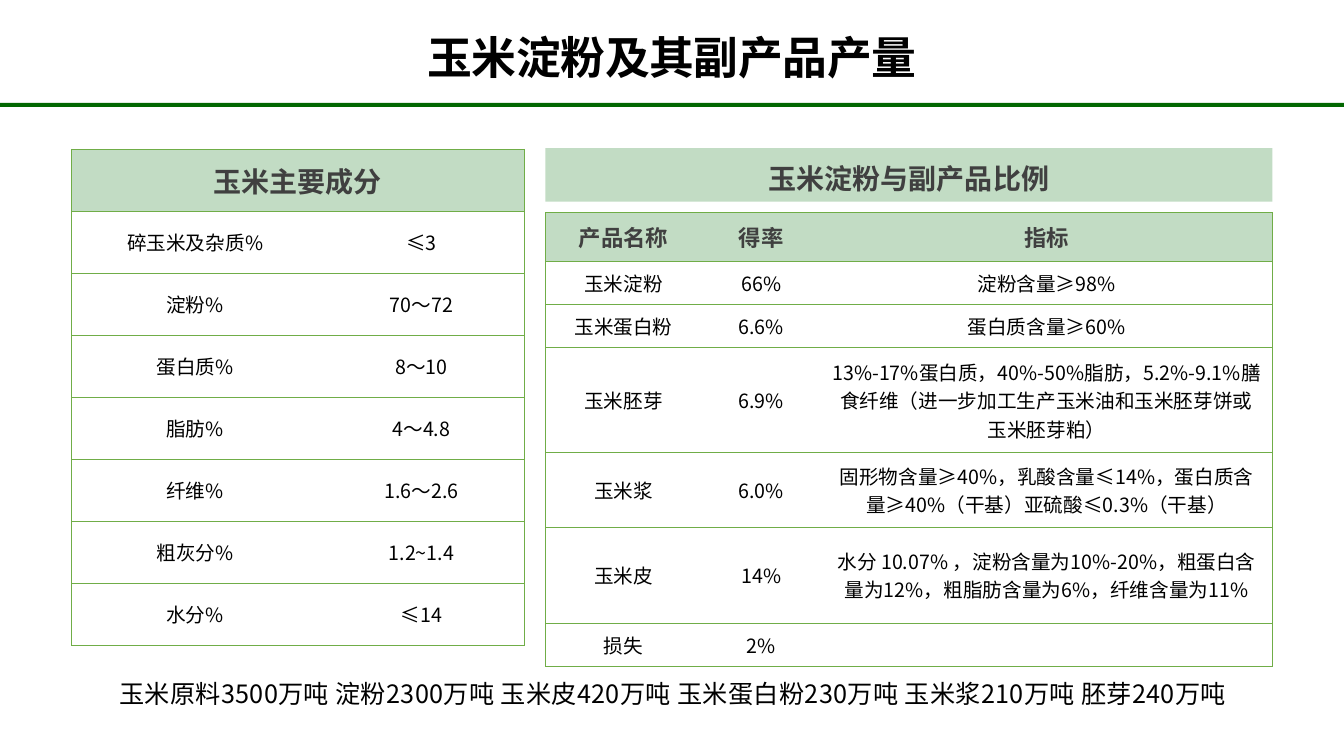
from lxml.etree import SubElement
from pptx import Presentation
from pptx.dml.color import RGBColor
from pptx.enum.shapes import MSO_SHAPE
from pptx.enum.text import MSO_ANCHOR, PP_ALIGN
from pptx.oxml.ns import qn
from pptx.util import Inches, Pt

FONT = "Noto Sans CJK SC"
BLACK, GREY = "000000", "404040"
PALE_GREEN, LINE_GREEN, DARK_GREEN = "C2DCC4", "70AD47", "026701"


def write(frame, text, size, color=BLACK, bold=False, spacing=None, tracking=0):
    """Put one centred paragraph into a text frame; tracking is in points."""
    frame.word_wrap = True
    frame.vertical_anchor = MSO_ANCHOR.MIDDLE
    paragraph = frame.paragraphs[0]
    paragraph.alignment = PP_ALIGN.CENTER
    if spacing:
        paragraph.line_spacing = spacing
    run = paragraph.add_run()
    run.text = text
    run.font.size = Pt(size)
    run.font.bold = bold
    run.font.name = FONT
    run.font.color.rgb = RGBColor.from_string(color)
    SubElement(run.font._element, qn("a:ea"), typeface=FONT)
    if tracking:
        run.font._element.set("spc", str(round(tracking * 100)))


def add_ruled_table(left, top, widths, heights, rows, header_size):
    """Add a table with horizontal rules, an outer frame and a tinted header.

    A header of one text spans all columns.
    """
    frame = slide.shapes.add_table(
        len(heights), len(widths), Inches(left), Inches(top),
        Inches(sum(widths)), Inches(sum(heights)))
    table = frame.table
    table.first_row = table.horz_banding = False
    for column, width in zip(table.columns, widths):
        column.width = Inches(width)
    for row, height in zip(table.rows, heights):
        row.height = Inches(height)
    last = len(widths) - 1
    for row_index, texts in enumerate(rows):
        header = row_index == 0
        spanned = len(texts) == 1
        if spanned:
            table.cell(row_index, 0).merge(table.cell(row_index, last))
        for column_index in range(len(widths)):
            cell = table.cell(row_index, column_index)
            cell.vertical_anchor = MSO_ANCHOR.MIDDLE
            ruled = {"L": column_index == 0,
                     "R": column_index == last or spanned, "T": True, "B": True}
            properties = cell._tc.get_or_add_tcPr()
            for side, visible in ruled.items():
                line = SubElement(properties, qn(f"a:ln{side}"), w=str(Pt(0.5)))
                if visible:
                    fill = SubElement(line, qn("a:solidFill"))
                    SubElement(fill, qn("a:srgbClr"), val=LINE_GREEN)
                else:
                    SubElement(line, qn("a:noFill"))
            if header:
                cell.fill.solid()
                cell.fill.fore_color.rgb = RGBColor.from_string(PALE_GREEN)
            else:
                cell.fill.background()
            if column_index < len(texts) and texts[column_index]:
                write(cell.text_frame, texts[column_index],
                      header_size if header else 14, GREY if header else BLACK, header)


presentation = Presentation()
presentation.slide_width = Inches(13.33)
presentation.slide_height = Inches(7.5)
slide = presentation.slides.add_slide(presentation.slide_layouts[6])

# Title, closing line
output = ["玉米原料3500万吨", "淀粉2300万吨", "玉米皮420万吨",
          "玉米蛋白粉230万吨", "玉米浆210万吨", "胚芽240万吨"]
for box, text, size, bold, spacing, tracking in [
        ((2.85, 0.34, 7.63, 0.51), "玉米淀粉及其副产品产量", 32, True, 0.91, -0.3),
        ((0.51, 6.61, 12.32, 0.44), " ".join(output), 18, False, 1.36, 0.24)]:
    text_frame = slide.shapes.add_textbox(*map(Inches, box)).text_frame
    text_frame.margin_left = text_frame.margin_right = 0
    text_frame.margin_top = text_frame.margin_bottom = 0
    write(text_frame, text, size, bold=bold, spacing=spacing, tracking=tracking)

# Title rule and heading of the right table
for box, color, text in [
        ((0, 1.02, 13.33, 0.04), DARK_GREEN, ""),
        ((5.41, 1.47, 7.21, 0.53), PALE_GREEN, "玉米淀粉与副产品比例")]:
    shape = slide.shapes.add_shape(MSO_SHAPE.RECTANGLE, *map(Inches, box))
    shape.shadow.inherit = False
    shape.fill.solid()
    shape.fill.fore_color.rgb = RGBColor.from_string(color)
    shape.line.fill.background()
    if text:
        write(shape.text_frame, text, 20, GREY, True, 1.2)

# Corn composition
composition = [
    ["玉米主要成分"],
    ["碎玉米及杂质%", "≤3"],
    ["淀粉%", "70～72"],
    ["蛋白质%", "8～10"],
    ["脂肪%", "4～4.8"],
    ["纤维%", "1.6～2.6"],
    ["粗灰分%", "1.2~1.4"],
    ["水分%", "≤14"],
]
add_ruled_table(0.71, 1.48, [2.45, 2.04],
                [4.92 / len(composition)] * len(composition), composition, 20)

# Product yields
yields = [
    ["产品名称", "得率", "指标"],
    ["玉米淀粉", "66%", "淀粉含量≥98%"],
    ["玉米蛋白粉", "6.6%", "蛋白质含量≥60%"],
    ["玉米胚芽", "6.9%", "13%-17%蛋白质，40%-50%脂肪，5.2%-9.1%膳食纤维"
     "（进一步加工生产玉米油和玉米胚芽饼或玉米胚芽粕）"],
    ["玉米浆", "6.0%", "固形物含量≥40%，乳酸含量≤14%，蛋白质含量≥40%（干基）"
     "亚硫酸≤0.3%（干基）"],
    ["玉米皮", "14%", "水分 10.07% ，淀粉含量为10%-20%，粗蛋白含量为12%，"
     "粗脂肪含量为6%，纤维含量为11%"],
    ["损失", "2%", ""],
]
add_ruled_table(5.41, 2.11, [1.55, 1.18, 4.48],
                [0.48, 0.43, 0.43, 1.04, 0.74, 0.95, 0.43], yields, 16)

presentation.save("out.pptx")
